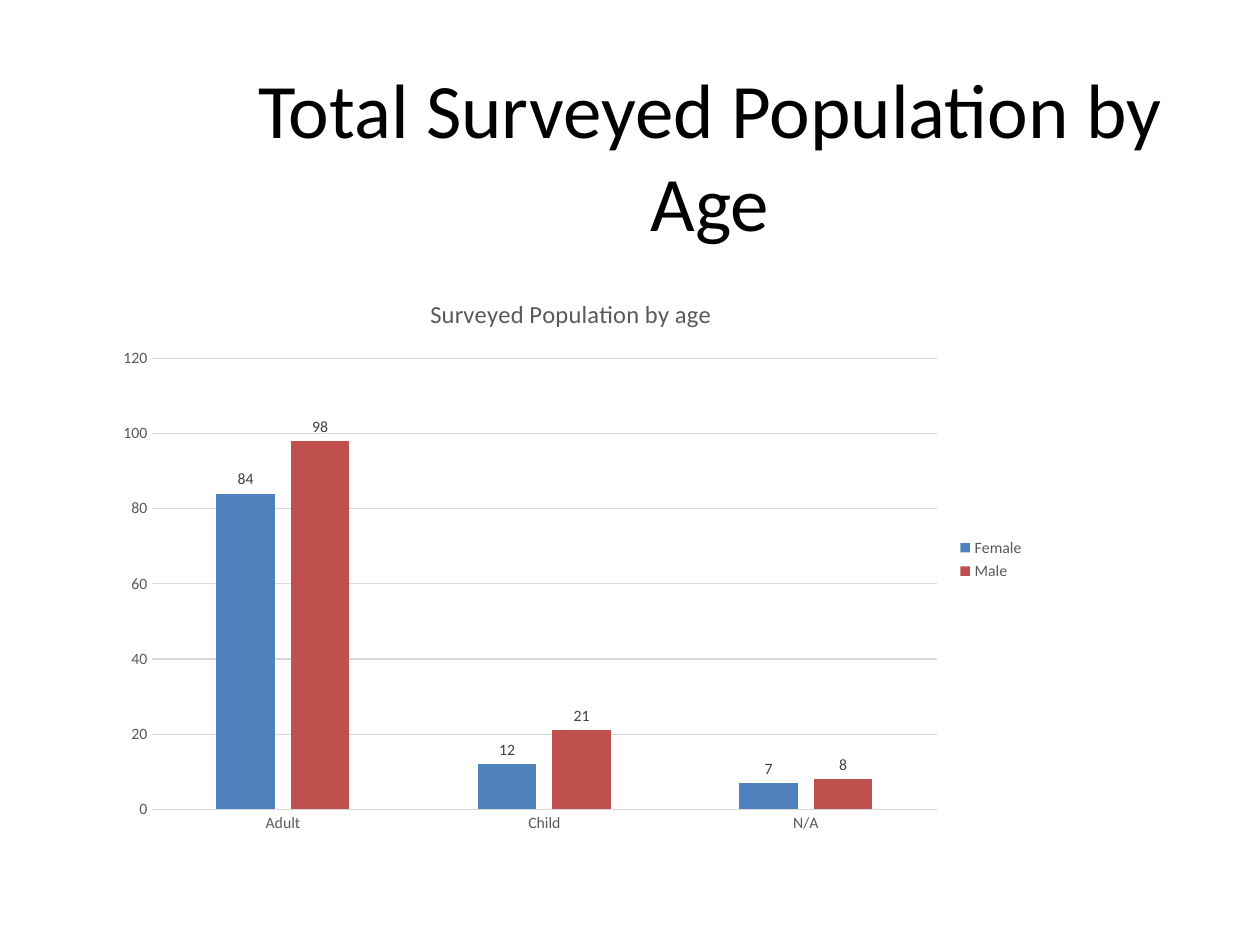
"""Build a slide with a column chart of the surveyed population by age and sex."""
from pptx import Presentation
from pptx.chart.data import CategoryChartData
from pptx.dml.color import RGBColor
from pptx.enum.chart import XL_CHART_TYPE, XL_LABEL_POSITION, XL_LEGEND_POSITION, XL_TICK_MARK
from pptx.enum.text import MSO_ANCHOR, MSO_AUTO_SIZE, PP_ALIGN
from pptx.util import Pt

COLUMNS = XL_CHART_TYPE.COLUMN_CLUSTERED
OUTSIDE_END = XL_LABEL_POSITION.OUTSIDE_END
LEGEND_RIGHT = XL_LEGEND_POSITION.RIGHT
NO_TICK = XL_TICK_MARK.NONE
MIDDLE = MSO_ANCHOR.MIDDLE
NO_AUTOFIT = MSO_AUTO_SIZE.NONE
CENTER = PP_ALIGN.CENTER

BLACK = RGBColor(0x00, 0x00, 0x00)
DARK_GRAY = RGBColor(0x40, 0x40, 0x40)
GRAY = RGBColor(0x59, 0x59, 0x59)
LIGHT_GRAY = RGBColor(0xD9, 0xD9, 0xD9)
BLUE = RGBColor(0x4F, 0x81, 0xBD)
RED = RGBColor(0xC0, 0x50, 0x4D)

AGE_GROUPS = ["Adult", "Child", "N/A"]
POPULATION = [("Female", [84, 12, 7], BLUE), ("Male", [98, 21, 8], RED)]


def set_font(font, size, color):
    font.name = "Calibri"
    font.size = Pt(size)
    font.bold = False
    font.color.rgb = color


def set_line(line):
    line.color.rgb = LIGHT_GRAY
    line.width = Pt(0.75)


presentation = Presentation()
presentation.slide_width = Pt(720)
presentation.slide_height = Pt(540)
slide = presentation.slides.add_slide(presentation.slide_layouts[5])

heading = slide.shapes.title
heading.left, heading.top = Pt(127.5), Pt(43.2)
heading.width, heading.height = Pt(556.5), Pt(90)
heading.text_frame.word_wrap = True
heading.text_frame.auto_size = NO_AUTOFIT
heading.text_frame.vertical_anchor = MIDDLE
heading_line = heading.text_frame.paragraphs[0]
heading_line.alignment = CENTER
heading_run = heading_line.add_run()
heading_run.text = "Total Surveyed Population by Age"
set_font(heading_run.font, 44, BLACK)

survey = CategoryChartData()
survey.categories = AGE_GROUPS
for sex, counts, color in POPULATION:
    survey.add_series(sex, counts)
chart = slide.shapes.add_chart(
    COLUMNS, Pt(59.8), Pt(157), Pt(532.8), Pt(325.4), survey).chart
set_font(chart.font, 10, BLACK)

chart.has_title = True
chart.chart_title.include_in_layout = False
chart_title_run = chart.chart_title.text_frame.paragraphs[0].add_run()
chart_title_run.text = "Surveyed Population by age"
set_font(chart_title_run.font, 14, GRAY)

chart.has_legend = True
chart.legend.position = LEGEND_RIGHT
chart.legend.include_in_layout = False
set_font(chart.legend.font, 9, GRAY)

age_axis, count_axis = chart.category_axis, chart.value_axis
for axis in (age_axis, count_axis):
    axis.major_tick_mark = NO_TICK
    axis.minor_tick_mark = NO_TICK
    set_font(axis.tick_labels.font, 9, GRAY)
set_line(age_axis.format.line)
count_axis.format.line.fill.background()
count_axis.minimum_scale = 0
count_axis.maximum_scale = 120
count_axis.major_unit = 20
count_axis.has_major_gridlines = True
set_line(count_axis.major_gridlines.format.line)

columns = chart.plots[0]
columns.gap_width = 219
columns.overlap = -27
columns.vary_by_categories = False
for series, (sex, counts, color) in zip(columns.series, POPULATION):
    series.format.fill.solid()
    series.format.fill.fore_color.rgb = color
    series.invert_if_negative = False
    labels = series.data_labels
    labels.show_value = True
    labels.position = OUTSIDE_END
    set_font(labels.font, 9, DARK_GRAY)

presentation.save("out.pptx")
